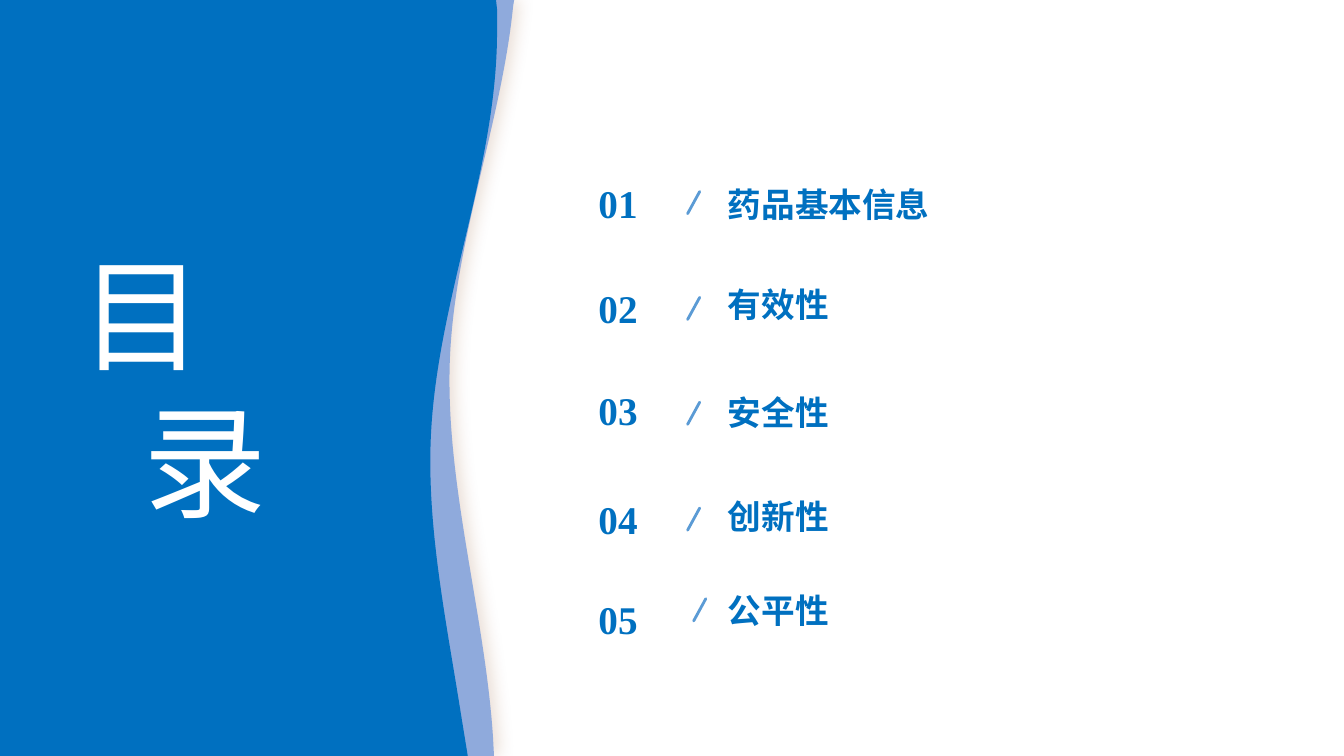
import pptx
import pptx.util
import pptx.dml.color
import pptx.enum.shapes
import pptx.enum.text
import pptx.oxml
import pptx.oxml.ns

Inches, Pt = pptx.util.Inches, pptx.util.Pt
RGBColor = pptx.dml.color.RGBColor
PP_ALIGN, MSO_ANCHOR = pptx.enum.text.PP_ALIGN, pptx.enum.text.MSO_ANCHOR
qn, A_NS = pptx.oxml.ns.qn, pptx.oxml.ns.nsdecls("a")

BLUE = RGBColor(0x00, 0x70, 0xC0)
PALE_BLUE = RGBColor(0x8F, 0xAA, 0xDC)
LINE_BLUE = RGBColor(0x5B, 0x9B, 0xD5)
WHITE = RGBColor(0xFF, 0xFF, 0xFF)
FONT = "Times New Roman"
HEIGHT = 7.5
NUMBER_X, SLASH_X, LABEL_X = 5.5, 6.82, 7.22

# Right edge of each wave: one point for a straight step,
# two handles and an end point for a curve
BACK_WAVE = [[(5.1, 0)], [(5.09, 0.06)],
             [(4.97, 1.25), (4.49, 2.43), (4.46, 3.64)],
             [(4.43, 4.85), (4.81, 6.1), (4.89, 7.31)], [(4.9, HEIGHT)]]
FRONT_WAVE = [[(4.92, 0)], [(4.93, 0.09)],
              [(4.93, 0.18), (4.93, 0.26), (4.93, 0.35)],
              [(4.92, 1.73), (4.3, 3.06), (4.27, 4.45)],
              [(4.25, 5.31), (4.43, 6.19), (4.57, 7.07)], [(4.64, HEIGHT)]]

# Number, label, then the tops of number, slash and label, and the slash shift
ITEMS = [("01", "药品基本信息", 1.76, 1.9, 1.82, 0),
         ("02", "有效性", 2.8, 2.95, 2.82, 0),
         ("03", "安全性", 3.82, 3.99, 3.89, 0),
         ("04", "创新性", 4.9, 5.04, 4.92, 0),
         ("05", "公平性", 5.89, 5.94, 5.85, 0.06)]


def add_wave(edge, color):
    """Fill the area between the slide's left side and a curved right edge."""
    builder = slide.shapes.build_freeform(0, 0)
    ends = [step[-1] for step in edge] + [(0, HEIGHT)]
    builder.add_line_segments([(Inches(x), Inches(y)) for x, y in ends], close=True)
    sp = builder.convert_to_shape()
    segments = list(sp._element.iter(qn("a:lnTo")))
    for segment, step in zip(segments, edge):
        if len(step) == 3:
            pts = "".join(f'<a:pt x="{Inches(x)}" y="{Inches(y)}"/>' for x, y in step)
            curve = pptx.oxml.parse_xml(f"<a:cubicBezTo {A_NS}>{pts}</a:cubicBezTo>")
            segment.getparent().replace(segment, curve)
    sp.shadow.inherit = False
    sp.fill.solid()
    sp.fill.fore_color.rgb = color
    sp.line.fill.background()
    return sp


def add_text(text, x, y, w, h, size, align, anchor):
    tf = slide.shapes.add_textbox(Inches(x), Inches(y), Inches(w), Inches(h)).text_frame
    tf.word_wrap = True
    tf.margin_left = tf.margin_right = tf.margin_top = tf.margin_bottom = 0
    tf.vertical_anchor = anchor
    tf.text = text
    p = tf.paragraphs[0]
    p.alignment = align
    font = p.runs[0].font
    font.name, font.size, font.bold = FONT, Pt(size), True
    font.color.rgb = BLUE


prs = pptx.Presentation()
prs.slide_width, prs.slide_height = Inches(13.33), Inches(HEIGHT)
slide = prs.slides.add_slide(prs.slide_layouts[5])

back = add_wave(BACK_WAVE, PALE_BLUE)
effects = back._element.spPr.find(qn("a:effectLst"))
effects.append(pptx.oxml.parse_xml(
    f'<a:outerShdw {A_NS} blurRad="{Pt(12)}" dist="{Pt(3)}" dir="0" '
    'algn="l" rotWithShape="0"><a:srgbClr val="843C0B"><a:alpha val="16000"/></a:srgbClr>'
    '</a:outerShdw>'))
add_wave(FRONT_WAVE, BLUE)

title = slide.shapes.title
title.left, title.top = Inches(0.7), Inches(2.31)
title.width, title.height = Inches(2.67), Inches(3.33)
tf = title.text_frame
tf.auto_size = pptx.enum.text.MSO_AUTO_SIZE.NONE
tf.vertical_anchor = MSO_ANCHOR.TOP
tf.text = "目\n录"
for p, align in zip(tf.paragraphs, (PP_ALIGN.LEFT, PP_ALIGN.CENTER)):
    p.alignment = align
    p.line_spacing = 1.0
    p.space_before = Pt(0)
    font = p.runs[0].font
    font.name, font.size = FONT, Pt(88)
    font.color.rgb = WHITE
slide.shapes._spTree.append(title._element)  # bring the title above the waves

for number, label, number_y, slash_y, label_y, shift in ITEMS:
    add_text(number, NUMBER_X, number_y, 1.26, 0.5, 28, PP_ALIGN.CENTER, MSO_ANCHOR.MIDDLE)
    x = SLASH_X + shift
    slash = slide.shapes.add_connector(
        pptx.enum.shapes.MSO_CONNECTOR.STRAIGHT,
        Inches(x + 0.12), Inches(slash_y), Inches(x), Inches(slash_y + 0.22))
    slash.line.color.rgb = LINE_BLUE
    slash.line.width = Pt(2)
    slash._element.spPr.find(qn("a:ln")).set("cap", "rnd")
    slash._element.spPr.append(pptx.oxml.parse_xml(f"<a:effectLst {A_NS}/>"))
    add_text(label, LABEL_X, label_y, 5.23, 0.9, 24, PP_ALIGN.LEFT, MSO_ANCHOR.TOP)

prs.save("out.pptx")
